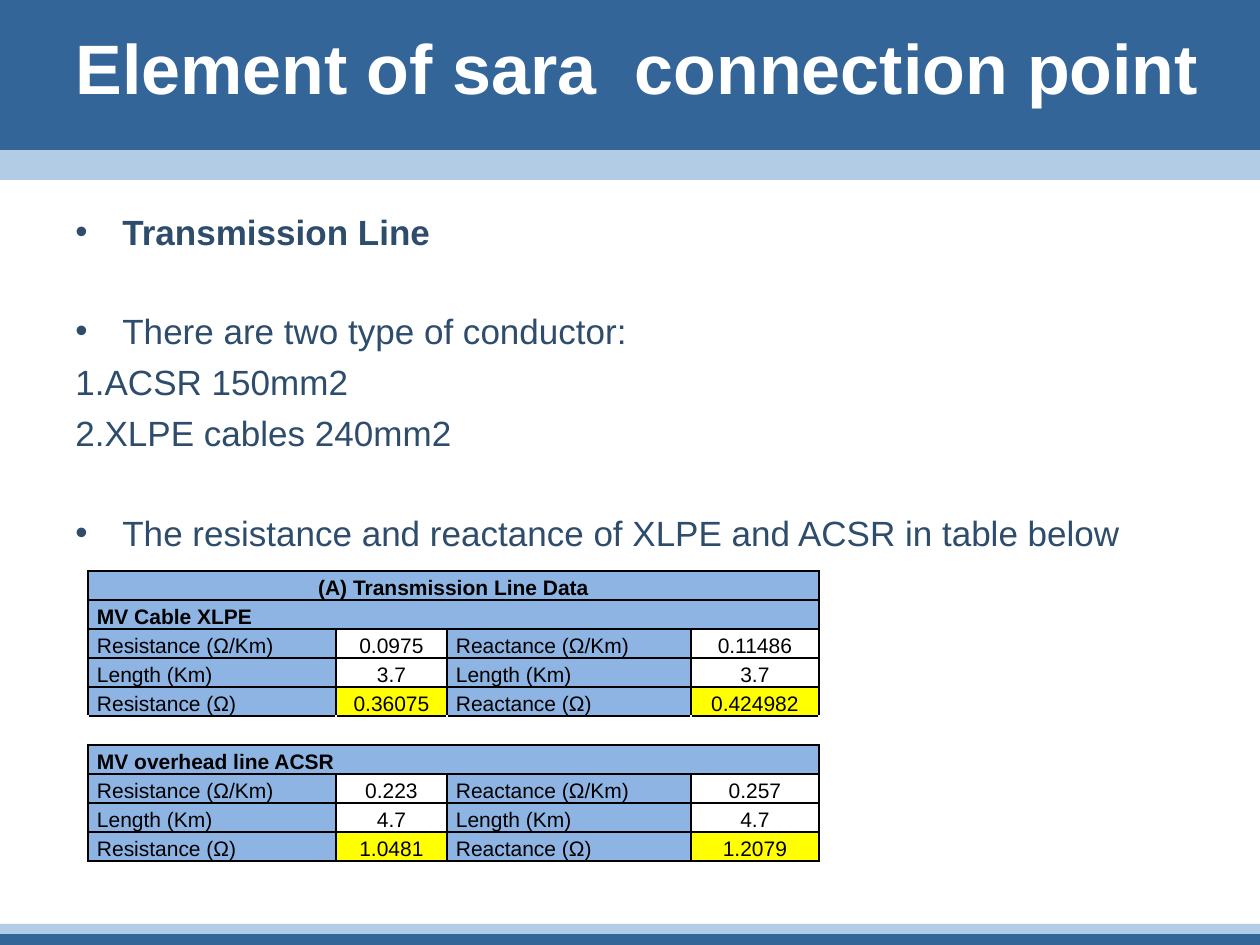
from lxml import etree
from pptx import Presentation
from pptx.dml.color import RGBColor
from pptx.enum.shapes import MSO_SHAPE
from pptx.enum.text import MSO_ANCHOR, PP_ALIGN
from pptx.oxml.ns import qn
from pptx.util import Pt

RECT = MSO_SHAPE.RECTANGLE
BOTTOM = MSO_ANCHOR.BOTTOM
LEFT, CENTER = PP_ALIGN.LEFT, PP_ALIGN.CENTER

# Content
TITLE = "Element of sara  connection point"
# text, bulleted, bold, space before in points
BODY = [
    ("Transmission Line", True, True, 2),
    ("There are two type of conductor:", True, False, 33),
    ("1.ACSR 150mm2", False, False, 5),
    ("2.XLPE cables 240mm2", False, False, 5),
    ("The resistance and reactance of XLPE and ACSR in table below", True, False, 33),
]
# One entry is a heading across the table, none is a gap
ROWS = [
    ["(A) Transmission Line Data"],
    ["MV Cable XLPE"],
    ["Resistance (Ω/Km)", "0.0975", "Reactance (Ω/Km)", "0.11486"],
    ["Length (Km)", "3.7", "Length (Km)", "3.7"],
    ["Resistance (Ω)", "0.36075", "Reactance (Ω)", "0.424982"],
    [],
    ["MV overhead line ACSR"],
    ["Resistance (Ω/Km)", "0.223", "Reactance (Ω/Km)", "0.257"],
    ["Length (Km)", "4.7", "Length (Km)", "4.7"],
    ["Resistance (Ω)", "1.0481", "Reactance (Ω)", "1.2079"],
]
RESULT_ROWS = (4, 9)

THEME = {
    "font": "Arial",
    "dark": "336599", "light": "B3CCE6", "white": "FFFFFF", "ink": "2E4C6B",
    "black": "000000", "label": "8DB4E3", "result": "FFFF00",
    "title_size": 40, "body_size": 20, "cell_size": 12,
}

# Layout in px
SLIDE = (1260, 945)
BANDS = [  # left, top, width, height, colour
    (0, 0, 1260, 165, "dark"),
    (0, 929, 1260, 16, "dark"),
    (0, 150, 1260, 30, "light"),
    (0, 924, 1260, 10, "light"),
]
TITLE_BOX = (63, 18, 1226, 131)
BODY_BOX = (63, 204, 1143, 426)
TABLE_AT = (88, 571)
COLUMNS = (248, 111, 244, 128)
ROW_HEIGHT = 29
INDENT = 47
CELL_INSET = 9


def px(n):
    return n * 914400 // 126


def rgb(name):
    return RGBColor.from_string(THEME[name])


def add_run(p, text, size, color, bold=False):
    r = p.add_run()
    r.text = text
    formats = {"name": THEME["font"], "size": Pt(THEME[size]), "bold": bold}
    for key, value in formats.items():
        setattr(r.font, key, value)
    r.font.color.rgb = rgb(color)


def add_text_frame(slide, box):
    tf = slide.shapes.add_textbox(*map(px, box)).text_frame
    tf.word_wrap = True
    return tf


def set_bullet(p, bulleted):
    pPr = p._p.get_or_add_pPr()
    pPr.set("marL", str(px(INDENT)))
    pPr.set("indent", str(-px(INDENT)))
    if bulleted:
        etree.SubElement(pPr, qn("a:buFont"), typeface=THEME["font"])
        etree.SubElement(pPr, qn("a:buChar"), char="•")
    else:
        etree.SubElement(pPr, qn("a:buNone"))


def set_borders(cell, sides):
    tcPr = cell._tc.get_or_add_tcPr()
    for side in sides:
        ln = etree.SubElement(tcPr, qn(f"a:ln{side}"), w=str(Pt(1)))
        fill = etree.SubElement(ln, qn("a:solidFill"))
        etree.SubElement(fill, qn("a:srgbClr"), val=THEME["black"])


def format_cell(cell, color, sides, align):
    set_borders(cell, sides)
    cell.fill.solid()
    cell.fill.fore_color.rgb = rgb(color)
    formats = {"vertical_anchor": BOTTOM, "margin_left": px(CELL_INSET),
               "margin_right": px(CELL_INSET), "margin_top": 0, "margin_bottom": 0}
    for key, value in formats.items():
        setattr(cell, key, value)
    p = cell.text_frame.paragraphs[0]
    p.alignment = align
    p.line_spacing = 1.15
    return p


def add_data_table(slide):
    size = (sum(COLUMNS), ROW_HEIGHT * len(ROWS))
    frame = slide.shapes.add_table(len(ROWS), len(COLUMNS), *map(px, TABLE_AT + size))
    table = frame.table
    table.first_row = table.horz_banding = False
    for column, width in zip(table.columns, COLUMNS):
        column.width = px(width)
    for i, texts in enumerate(ROWS):
        table.rows[i].height = px(ROW_HEIGHT)
        heading = len(texts) == 1
        for j in range(len(COLUMNS)):
            is_value = j % 2 == 1 and not heading
            if not texts:
                color = "white"
            elif is_value:
                color = "result" if i in RESULT_ROWS else "white"
            else:
                color = "label"
            align = CENTER if is_value or i == 0 else LEFT
            p = format_cell(table.cell(i, j), color, "LRTB" if texts else "TB", align)
            if j < len(texts):
                add_run(p, texts[j], "cell_size", "black", heading)
            else:
                # Keep empty cells as low as the others
                etree.SubElement(p._p, qn("a:endParaRPr"), sz=str(THEME["cell_size"] * 100))
        if heading:
            table.cell(i, 0).merge(table.cell(i, len(COLUMNS) - 1))


def main():
    prs = Presentation()
    prs.slide_width, prs.slide_height = map(px, SLIDE)
    slide = prs.slides.add_slide(prs.slide_layouts[6])

    # Header and footer bands
    for *box, color in BANDS:
        sp = slide.shapes.add_shape(RECT, *map(px, box))
        sp.shadow.inherit = False
        sp.fill.solid()
        sp.fill.fore_color.rgb = rgb(color)
        sp.line.fill.background()

    # Title
    tf = add_text_frame(slide, TITLE_BOX)
    add_run(tf.paragraphs[0], TITLE, "title_size", "white", True)

    # Body text
    tf = add_text_frame(slide, BODY_BOX)
    for i, (text, bulleted, bold, before) in enumerate(BODY):
        p = tf.add_paragraph() if i else tf.paragraphs[0]
        p.space_before = Pt(before)
        set_bullet(p, bulleted)
        add_run(p, text, "body_size", "ink", bold)

    # Line data
    add_data_table(slide)
    prs.save("out.pptx")


if __name__ == "__main__":
    main()
